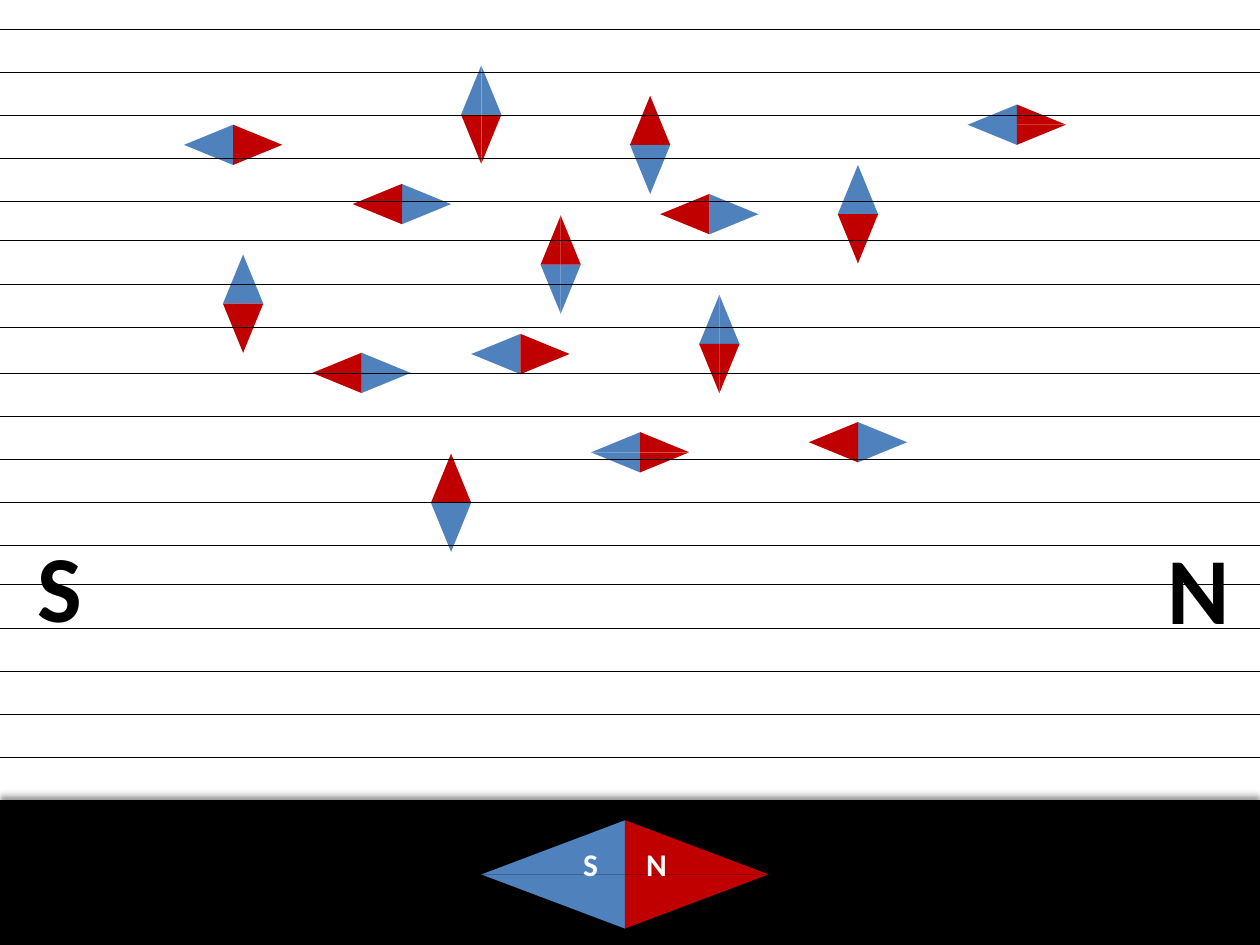
from math import cos, radians, sin

from lxml import etree
from pptx import Presentation
from pptx.dml.color import RGBColor
from pptx.enum.shapes import MSO_CONNECTOR as Connector, MSO_SHAPE as Shape
from pptx.enum.text import MSO_AUTO_SIZE as AutoSize
from pptx.oxml import parse_xml
from pptx.oxml.ns import qn
from pptx.util import Inches, Pt

BLUE = RGBColor(0x4F, 0x81, 0xBD)
RED = RGBColor(0xC0, 0x00, 0x00)
BLACK = RGBColor(0x00, 0x00, 0x00)
WHITE = RGBColor(0xFF, 0xFF, 0xFF)

# Quarters of an upright needle: side, end, colour, flips
QUARTERS = [
    (1, -1, BLUE, ()),
    (-1, -1, BLUE, ("flipH",)),
    (1, 1, RED, ("flipV",)),
    (-1, 1, RED, ("flipH", "flipV")),
]

prs = Presentation()
prs.slide_width, prs.slide_height = Inches(10), Inches(7.5)
slide = prs.slides.add_slide(prs.slide_layouts[6])


def add_needle(x, y, angle, width, length):
    """Group four right triangles around (x, y), turned clockwise by angle."""
    needle = slide.shapes.add_group_shape()
    turn = radians(angle)
    for side, end, colour, flips in QUARTERS:
        dx, dy = side * width / 2, end * length / 2
        centre_x = x + dx * cos(turn) - dy * sin(turn)
        centre_y = y + dx * sin(turn) + dy * cos(turn)
        quarter = needle.shapes.add_shape(
            Shape.RIGHT_TRIANGLE,
            Inches(centre_x - width / 2), Inches(centre_y - length / 2),
            Inches(width), Inches(length))
        quarter.rotation = angle
        for flip in flips:
            quarter._element.spPr.xfrm.set(flip, "1")
        quarter.fill.solid()
        quarter.fill.fore_color.rgb = colour
        quarter.line.fill.background()
        quarter.shadow.inherit = False


# Scattered compass needles: centre x, centre y, angle
for x, y, angle in [
    (3.19, 1.62, 90), (4.13, 2.81, 270), (5.16, 1.15, 180),
    (4.45, 2.1, 180), (6.81, 3.51, 90), (5.08, 3.59, 270),
    (5.71, 2.73, 0), (6.81, 1.7, 0), (8.07, 0.99, 270),
    (5.63, 1.7, 90), (3.58, 3.99, 180), (3.82, 0.91, 0),
    (2.87, 2.96, 90), (1.85, 1.15, 270), (1.93, 2.41, 0),
]:
    add_needle(x, y, angle, 0.16, 0.39)

# Black footer with a soft shadow upwards
footer = slide.shapes.add_shape(
    Shape.RECTANGLE, 0, Inches(6.35), Inches(10), Inches(1.15))
footer.fill.solid()
footer.fill.fore_color.rgb = BLACK
footer.line.fill.background()
footer._element.spPr.append(parse_xml(
    '<a:effectLst xmlns:a="http://schemas.openxmlformats.org/drawingml/2006/main">'
    '<a:outerShdw blurRad="50800" dist="38100" dir="16200000" algn="b" rotWithShape="0">'
    '<a:srgbClr val="000000"><a:alpha val="40000"/></a:srgbClr>'
    '</a:outerShdw></a:effectLst>'))

# Large needle in the footer
add_needle(4.96, 6.94, 270, 0.43, 1.14)

# Pole letters on the needle and at the field's ends
for letter, left, top, width, height, size, colour in [
    ("S", 4.53, 6.66, 0.32, 0.4, 18, WHITE),
    ("N", 5.03, 6.66, 0.37, 0.4, 18, WHITE),
    ("S", 0.2, 4.14, 0.56, 1.01, 54, BLACK),
    ("N", 9.17, 4.16, 0.7, 1.01, 54, BLACK),
]:
    pole = slide.shapes.add_textbox(
        Inches(left), Inches(top), Inches(width), Inches(height)).text_frame
    pole.word_wrap = False
    pole.auto_size = AutoSize.SHAPE_TO_FIT_TEXT
    pole.text = letter
    font = pole.paragraphs[0].font
    font.name, font.size, font.bold = "Calibri", Pt(size), True
    font.color.rgb = colour

# Field lines in evenly spaced bands: left end, first y, last y, count
field = slide.shapes.add_group_shape()
for left, first, last, count in [
    (-0.04, 4.64, 6.01, 5),
    (-0.04, 2.96, 4.33, 5),
    (-0.12, 1.91, 2.6, 3),
    (-0.12, 0.23, 1.6, 5),
]:
    for i in range(count):
        y = Inches(first + i * (last - first) / (count - 1))
        field_line = field.shapes.add_connector(
            Connector.STRAIGHT, Inches(left), y, Inches(left + 10.43), y)
        field_line.line.color.rgb = BLACK
        field_line.line.width = Pt(0.25)
        etree.SubElement(field_line._element.spPr, qn("a:effectLst"))

prs.save("out.pptx")
